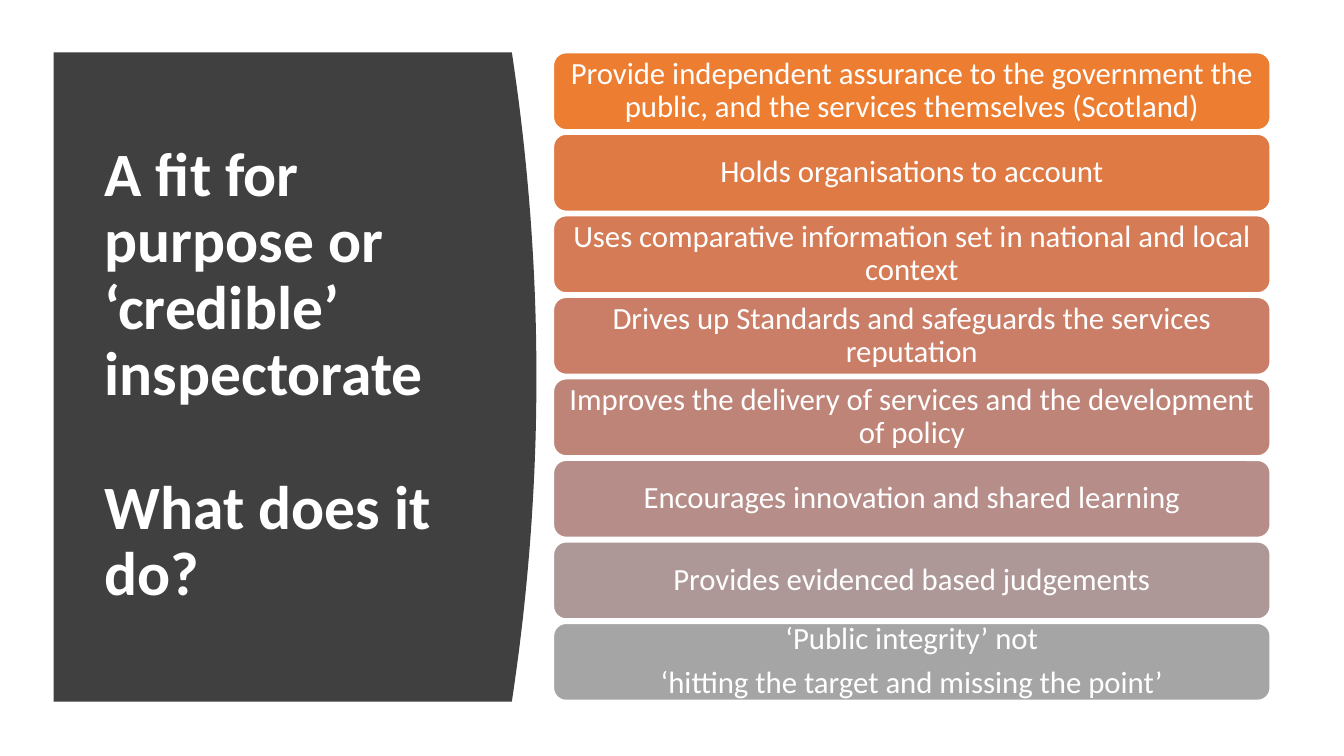
from pptx import Presentation
from pptx.dml.color import RGBColor
from pptx.enum.shapes import MSO_SHAPE
from pptx.enum.text import MSO_ANCHOR, PP_ALIGN
from pptx.util import Cm, Pt

FONT = "Calibri"
WHITE = "FFFFFF"
TITLE = ["A fit for purpose or ‘credible’ inspectorate", "What does it do?"]
BARS = [
    ("ED7D31", ["Provide independent assurance to the government the public, "
                "and the services themselves (Scotland)"]),
    ("E07A44", ["Holds organisations to account"]),
    ("D57B56", ["Uses comparative information set in national and local context"]),
    ("CA7E67", ["Drives up Standards and safeguards the services reputation"]),
    ("BF8478", ["Improves the delivery of services and the development of policy"]),
    ("B68D88", ["Encourages innovation and shared learning"]),
    ("AD9897", ["Provides evidenced based judgements"]),
    ("A5A5A5", ["‘Public integrity’ not",
                "‘hitting the target and missing the point’"]),
]

# Panel and bar measures in centimetres
LEFT, TOP, EDGE, HIGH, BULGE = 1.35, 1.32, 12.9, 16.36, 0.62
BAR_X, BAR_W, BAR_H = 13.94, 18.08, 1.96
STEP = 14.38 / (len(BARS) - 1)


def paint(fill, color):
    fill.solid()
    fill.fore_color.rgb = RGBColor.from_string(color)


def write(frame, lines, size, align, gap, bold=False):
    frame.word_wrap = True
    frame.vertical_anchor = MSO_ANCHOR.MIDDLE
    frame.text = "\n".join(lines)
    for i, para in enumerate(frame.paragraphs):
        para.alignment = align
        para.line_spacing = 0.9
        para.space_before = Pt(gap if i else 0)
        for run in para.runs:
            run.font.name = FONT
            run.font.size = Pt(size)
            run.font.bold = bold
            run.font.color.rgb = RGBColor.from_string(WHITE)


def add_panel(slide):
    # The right side bows out as a parabola
    steps = 40
    curve = []
    for i in range(steps + 1):
        u = 2 * i / steps - 1
        curve.append((Cm(EDGE + BULGE * (1 - u * u)), Cm(TOP + HIGH * i / steps)))
    pen = slide.shapes.build_freeform(Cm(LEFT), Cm(TOP))
    pen.add_line_segments(curve + [(Cm(LEFT), Cm(TOP + HIGH))], close=True)
    panel = pen.convert_to_shape()
    panel.shadow.inherit = False
    paint(panel.fill, "404040")
    panel.line.fill.background()


def add_title(slide):
    box = slide.shapes.add_textbox(Cm(2.39), Cm(2.82), Cm(9.5), Cm(13.31))
    write(box.text_frame, TITLE, 44, PP_ALIGN.LEFT, 48, bold=True)


def add_bar(slide, top, color, lines):
    bar = slide.shapes.add_shape(MSO_SHAPE.ROUNDED_RECTANGLE,
                                 Cm(BAR_X), Cm(top), Cm(BAR_W), Cm(BAR_H))
    bar.shadow.inherit = False
    paint(bar.fill, color)
    paint(bar.line.fill, WHITE)
    bar.line.width = Pt(1.5)
    frame = bar.text_frame
    frame.margin_left = frame.margin_right = Cm(0.23)
    frame.margin_top = frame.margin_bottom = Cm(0.13)
    write(frame, lines, 22, PP_ALIGN.CENTER, 7.7)


def main():
    deck = Presentation()
    deck.slide_width, deck.slide_height = Cm(33.87), Cm(19.05)
    slide = deck.slides.add_slide(deck.slide_layouts[6])

    # Dark panel with the question
    add_panel(slide)
    add_title(slide)

    # Stack of answers
    for i, (color, lines) in enumerate(BARS):
        add_bar(slide, TOP + i * STEP, color, lines)

    deck.save("out.pptx")


if __name__ == "__main__":
    main()
